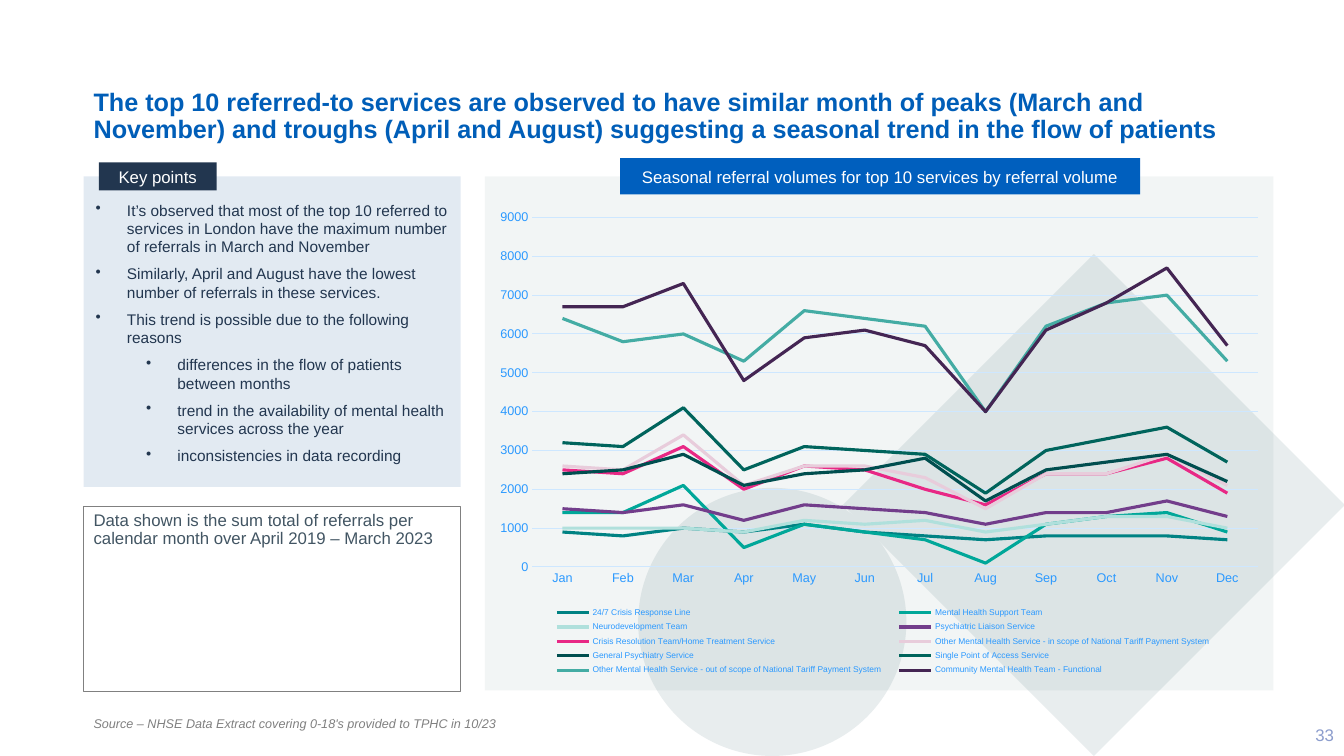
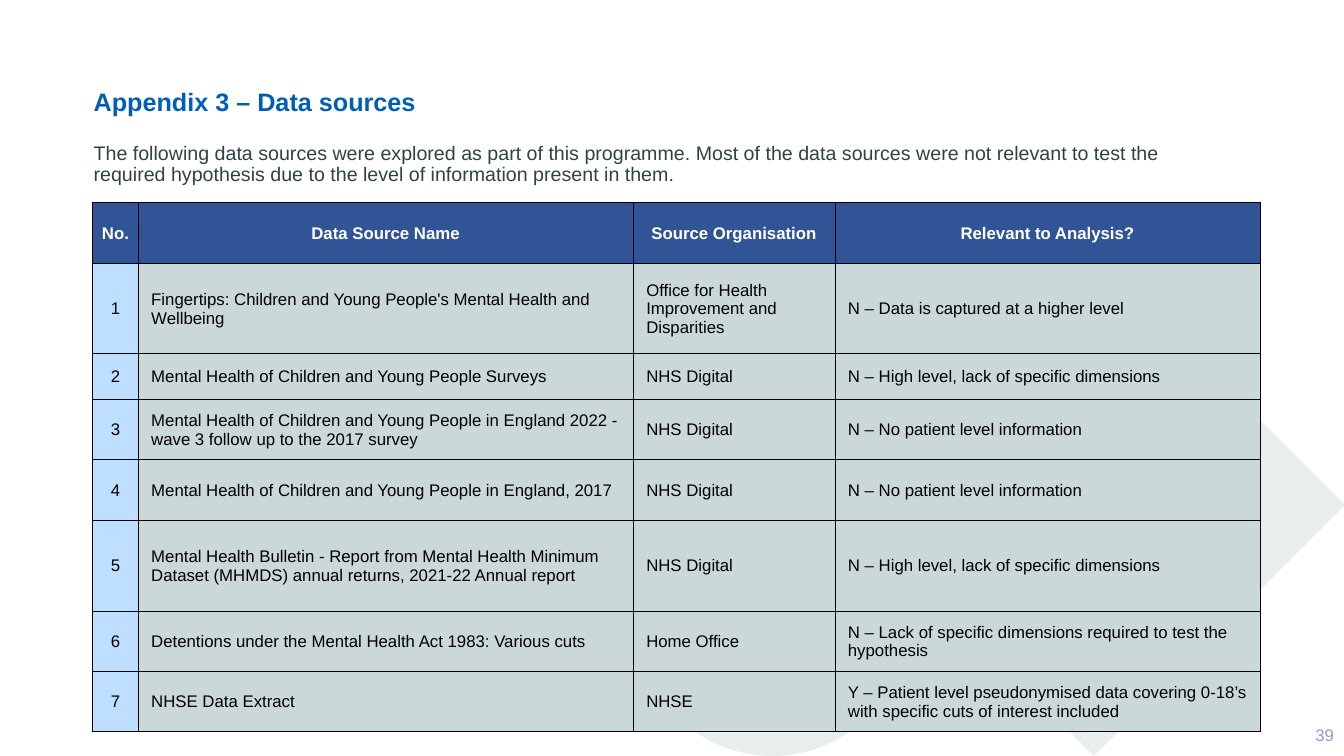
from lxml import etree
from pptx import Presentation, util as u
from pptx.chart.data import CategoryChartData
from pptx.dml.color import RGBColor
from pptx.enum import chart as ch, shapes, text
from pptx.oxml import ns

SCALE = 9144  # EMU per px, 100 px to the inch
FONT = "Arial"
NAVY, BLUE, GREY, WHITE = "22364F", "005EB8", "808080", "FFFFFF"
PALE, GRID, AXIS = "E8EDEE", "CEE7FF", "2B99FF"
HEAD, INDEX, CELL = "305496", "BEDFFF", "CBD8D9"
CENTER, RIGHT = text.PP_ALIGN.CENTER, text.PP_ALIGN.RIGHT
TOP, MIDDLE = text.MSO_ANCHOR.TOP, text.MSO_ANCHOR.MIDDLE
SHAPE = shapes.MSO_SHAPE

TITLE = dict(size=18, color=BLUE, bold=True)
LABEL = dict(size=12, color=WHITE)
POINT = dict(size=11, color=NAVY)

POINTS = [
    (0, "It’s observed that most of the top 10 referred to services in London "
        "have the maximum number of referrals in March and November"),
    (0, "Similarly, April and August have the lowest number of referrals in these services."),
    (0, "This trend is possible due to the following reasons"),
    (1, "differences in the flow of patients between months"),
    (1, "trend in the availability of mental health services across the year"),
    (1, "inconsistencies in data recording"),
]

MONTHS = "Jan Feb Mar Apr May Jun Jul Aug Sep Oct Nov Dec".split()
SERIES = [
    ("24/7 Crisis Response Line", "008283",
     [900, 800, 1000, 900, 1100, 900, 800, 700, 800, 800, 800, 700]),
    ("Mental Health Support Team", "00A799",
     [1400, 1400, 2100, 500, 1100, 900, 700, 100, 1100, 1300, 1400, 900]),
    ("Neurodevelopment Team", "B0E0DC",
     [1000, 1000, 1000, 900, 1200, 1100, 1200, 900, 1100, 1300, 1300, 1000]),
    ("Psychiatric Liaison Service", "723D8B",
     [1500, 1400, 1600, 1200, 1600, 1500, 1400, 1100, 1400, 1400, 1700, 1300]),
    ("Crisis Resolution Team/Home Treatment Service", "E82885",
     [2500, 2400, 3100, 2000, 2600, 2500, 2000, 1600, 2400, 2400, 2800, 1900]),
    ("Other Mental Health Service - in scope of National Tariff Payment System", "E8CCDB",
     [2600, 2500, 3400, 2100, 2600, 2600, 2300, 1500, 2400, 2400, 2900, 2100]),
    ("General Psychiatry Service", "004E4F",
     [2400, 2500, 2900, 2100, 2400, 2500, 2800, 1700, 2500, 2700, 2900, 2200]),
    ("Single Point of Access Service", "00645C",
     [3200, 3100, 4100, 2500, 3100, 3000, 2900, 1900, 3000, 3300, 3600, 2700]),
    ("Other Mental Health Service - out of scope of National Tariff Payment System", "44ACA4",
     [6400, 5800, 6000, 5300, 6600, 6400, 6200, 4000, 6200, 6800, 7000, 5300]),
    ("Community Mental Health Team - Functional", "442553",
     [6700, 6700, 7300, 4800, 5900, 6100, 5700, 4000, 6100, 6800, 7700, 5700]),
]

HEADS = ["No.", "Data Source Name", "Source Organisation", "Relevant to Analysis?"]
COLS = [45, 491, 200, 422]
# Row height, source, organisation, relevance
SOURCES = [
    (90, "Fingertips: Children and Young People's Mental Health and Wellbeing",
     "Office for Health Improvement and Disparities", "N – Data is captured at a higher level"),
    (45, "Mental Health of Children and Young People Surveys",
     "NHS Digital", "N – High level, lack of specific dimensions"),
    (60, "Mental Health of Children and Young People in England 2022 - "
         "wave 3 follow up to the 2017 survey",
     "NHS Digital", "N – No patient level information"),
    (60, "Mental Health of Children and Young People in England, 2017",
     "NHS Digital", "N – No patient level information"),
    (90, "Mental Health Bulletin - Report from Mental Health Minimum Dataset (MHMDS) "
         "annual returns, 2021-22 Annual report",
     "NHS Digital", "N – High level, lack of specific dimensions"),
    (60, "Detentions under the Mental Health Act 1983: Various cuts",
     "Home Office", "N – Lack of specific dimensions required to test the hypothesis"),
    (60, "NHSE Data Extract", "NHSE",
     "Y – Patient level pseudonymised data covering 0-18’s with specific cuts of interest included"),
]


# Basics
def px(n):
    return u.Emu(n * SCALE)


def rgb(code):
    return RGBColor.from_string(code)


def sub(node, tag, **attrs):
    return etree.SubElement(node, ns.qn(tag), attrs)


def style(font, size, color, **more):
    font.color.rgb = rgb(color)
    for key, val in dict(name=FONT, size=u.Pt(size), **more).items():
        setattr(font, key, val)


def stroke(line, color, width):
    line.color.rgb = rgb(color)
    line.width = u.Pt(width)


def frame(box, anchor=TOP, pad=(10, 5, 10, 5)):
    tf = box.text_frame
    tf.word_wrap = True
    tf.vertical_anchor = anchor
    for side, n in zip(("left", "top", "right", "bottom"), pad):
        setattr(tf, "margin_" + side, px(n))
    return tf


def write(par, words, font, **form):
    for key, val in form.items():
        setattr(par, key, val)
    run = par.add_run()
    run.text = words
    style(run.font, **font)


# Elements
def label(slide, at, words, font, anchor=TOP, **form):
    box = slide.shapes.add_textbox(*map(px, at))
    write(frame(box, anchor).paragraphs[0], words, font, **form)


def block(slide, kind, at, fill=None, alpha=None, line=None):
    shape = slide.shapes.add_shape(kind, *map(px, at))
    shape.shadow.inherit = False
    if fill:
        shape.fill.solid()
        shape.fill.fore_color.rgb = rgb(fill)
        if alpha:
            tint = next(shape.fill._xPr.iter(ns.qn("a:srgbClr")))
            sub(tint, "a:alpha", val=str(alpha * 1000))
    else:
        shape.fill.background()
    if line:
        stroke(shape.line, line, 0.75)
    else:
        shape.line.fill.background()
    return shape


def tag(slide, at, words, fill):
    shape = block(slide, SHAPE.RECTANGLE, at, fill)
    par = frame(shape, MIDDLE, (4, 4, 4, 4)).paragraphs[0]
    write(par, words, LABEL, alignment=CENTER)


def bullets(shape, items):
    tf = frame(shape, pad=(12, 24, 12, 5))
    for i, (level, words) in enumerate(items):
        par = tf.paragraphs[0] if i == 0 else tf.add_paragraph()
        props = par._p.get_or_add_pPr()
        props.set("marL", str(px(31 + 50 * level)))
        props.set("indent", str(px(-31)))
        sub(props, "a:buChar", char="•")
        write(par, words, POINT, level=level, space_after=u.Pt(6),
              alignment=text.PP_ALIGN.LEFT)


def layout(node, spot, inner=False):
    old = node.find(ns.qn("c:layout"))
    if old is not None:
        node.remove(old)
    new = etree.Element(ns.qn("c:layout"))
    form = sub(new, "c:manualLayout")
    if inner:
        sub(form, "c:layoutTarget", val="inner")
    for key in "xy":
        sub(form, f"c:{key}Mode", val="edge")
    for key, val in zip("xywh", spot):
        sub(form, f"c:{key}", val=str(val))
    # The layout leads the plot area but follows the legend position
    node.insert(0 if inner else 1, new)


def graph(slide, at):
    data = CategoryChartData(number_format="General")
    data.categories = MONTHS
    for name, _, vals in SERIES:
        data.add_series(name, vals)
    chart = slide.shapes.add_chart(ch.XL_CHART_TYPE.LINE, *map(px, at), data).chart
    style(chart.font, 10, BLUE)
    chart.has_title = False
    plot = chart.plots[0]
    plot.vary_by_categories = False
    for line, (_, color, _) in zip(plot.series, SERIES):
        line.smooth = False
        stroke(line.format.line, color, 2.25)

    # Axes
    for axis in (chart.category_axis, chart.value_axis):
        style(axis.tick_labels.font, 9, AXIS)
        axis.major_tick_mark = axis.minor_tick_mark = ch.XL_TICK_MARK.NONE
    stroke(chart.category_axis.format.line, GRID, 0.75)
    axis = chart.value_axis
    axis.minimum_scale, axis.maximum_scale, axis.major_unit = 0, 9000, 1000
    axis.format.line.fill.background()
    stroke(axis.major_gridlines.format.line, GRID, 0.75)

    # Legend and plot area
    chart.has_legend = True
    key = chart.legend
    key.position = ch.XL_LEGEND_POSITION.BOTTOM
    key.include_in_layout = False
    style(key.font, 6, AXIS)
    layout(key._element, (0.07, 0.83, 0.87, 0.15))
    root = chart._chartSpace
    layout(root.chart.plotArea, (0.06, 0.08, 0.92, 0.68), inner=True)

    # Sheer backdrop
    back = etree.Element(ns.qn("c:spPr"))
    tint = sub(sub(back, "a:solidFill"), "a:srgbClr", val="004142")
    sub(tint, "a:alpha", val="5000")
    sub(sub(back, "a:ln"), "a:noFill")
    root.chart.addnext(back)


def fill_cell(cell, words, fill, font, center):
    props = cell._tc.get_or_add_tcPr()
    for side in "LRTB":
        edge = sub(props, "a:ln" + side, w="6350")
        sub(sub(edge, "a:solidFill"), "a:srgbClr", val="000000")
    cell.fill.solid()
    cell.fill.fore_color.rgb = rgb(fill)
    cell.vertical_anchor = MIDDLE
    cell.margin_left = px(1 if center else 13)
    cell.margin_right = cell.margin_top = px(1)
    cell.margin_bottom = 0
    form = dict(alignment=CENTER) if center else {}
    write(cell.text_frame.paragraphs[0], words, font, **form)


def grid(slide, left, top):
    highs = [60] + [row[0] for row in SOURCES]
    rows = [HEADS] + [(str(i), *row[1:]) for i, row in enumerate(SOURCES, 1)]
    at = (left, top, sum(COLS), sum(highs))
    table = slide.shapes.add_table(len(rows), len(COLS), *map(px, at)).table
    table.horz_banding = False
    for col, wide in zip(table.columns, COLS):
        col.width = px(wide)
    for r, (high, row) in enumerate(zip(highs, rows)):
        table.rows[r].height = px(high)
        font = dict(size=12, color="000000" if r else WHITE, bold=r == 0)
        for c, words in enumerate(row):
            fill = HEAD if r == 0 else INDEX if c == 0 else CELL
            fill_cell(table.cell(r, c), words, fill, font, r == 0 or c == 0)


# Slides
def base(deck, number, title):
    slide = deck.slides.add_slide(deck.slide_layouts[6])
    block(slide, SHAPE.OVAL, (633, 484, 266, 266), PALE)
    block(slide, SHAPE.DIAMOND, (836, 252, 498, 498), PALE)
    label(slide, (1236, 709, 97, 40), number, dict(size=12, color="8C9DCD"),
          MIDDLE, alignment=RIGHT)
    label(slide, (83, 84, 1152, 80), title, TITLE, line_spacing=0.9)
    return slide


def trends(deck):
    slide = base(deck, "33", "The top 10 referred-to services are observed to have similar "
                 "month of peaks (March and November) and troughs (April and August) "
                 "suggesting a seasonal trend in the flow of patients")
    label(slide, (83, 705, 1166, 25),
          "Source – NHSE Data Extract covering 0-18's provided to TPHC in 10/23",
          dict(size=9, color=GREY, italic=True))
    panel = block(slide, SHAPE.RECTANGLE, (83, 175, 374, 308), "C7D6E7", alpha=50)
    bullets(panel, POINTS)
    tag(slide, (98, 161, 117, 28), "Key points", NAVY)
    graph(slide, (481, 175, 782, 510))
    tag(slide, (615, 157, 516, 36),
        "Seasonal referral volumes for top 10 services by referral volume", "005FBE")
    note = block(slide, SHAPE.RECTANGLE, (83, 503, 374, 183), line=GREY)
    write(frame(note).paragraphs[0], "Data shown is the sum total of referrals per calendar "
          "month over April 2019 – March 2023", dict(size=12, color="425563"),
          line_spacing=0.9, alignment=text.PP_ALIGN.LEFT)


def sources(deck):
    slide = base(deck, "39", "Appendix 3 – Data sources")
    label(slide, (83, 137, 1115, 55),
          "The following data sources were explored as part of this programme. Most of the "
          "data sources were not relevant to test the required hypothesis due to the level "
          "of information present in them.", dict(size=14, color="2F4346"), line_spacing=0.9)
    grid(slide, 92, 201)


def main():
    deck = Presentation()
    deck.slide_width, deck.slide_height = px(1333), px(750)
    trends(deck)
    sources(deck)
    deck.save("out.pptx")


if __name__ == "__main__":
    main()
